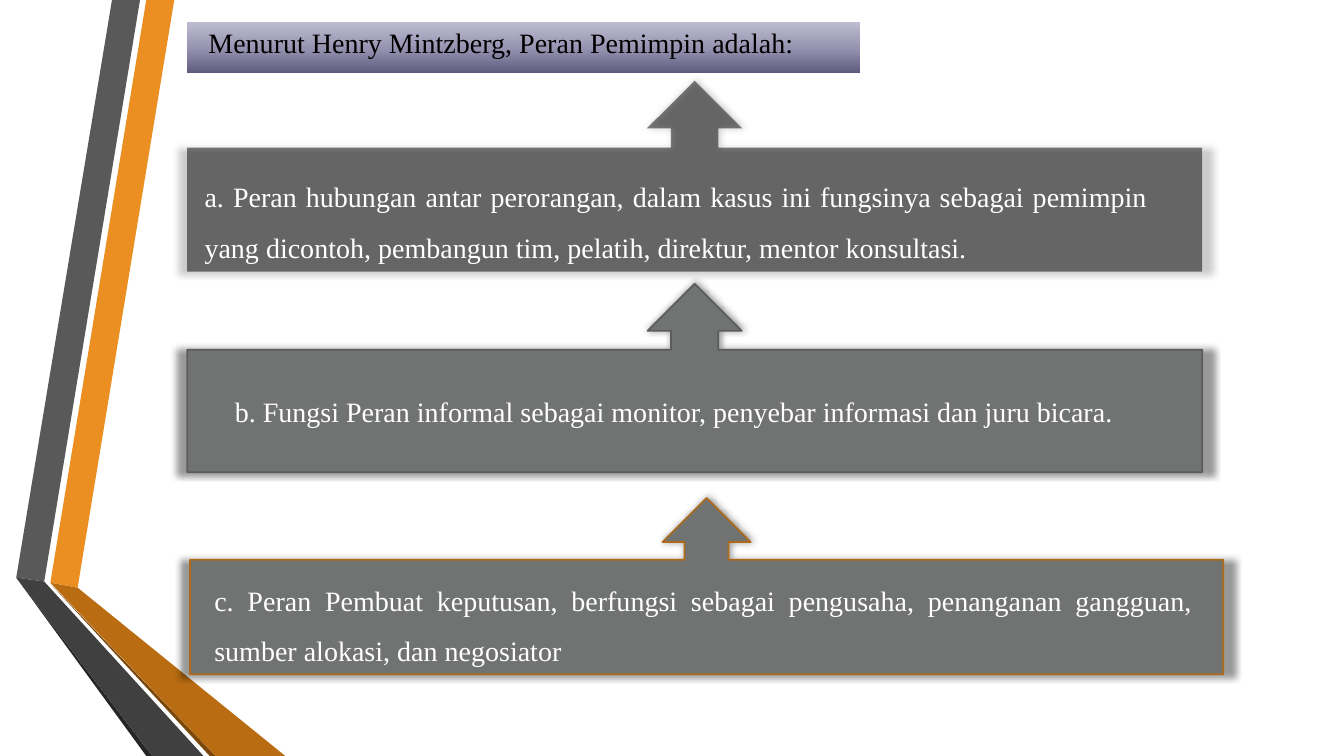
"""Builds a slide with three leadership roles in stacked arrow callouts."""
from dataclasses import dataclass

from lxml import etree
from pptx import Presentation
from pptx.dml.color import RGBColor
from pptx.enum.shapes import MSO_SHAPE
from pptx.enum.text import MSO_AUTO_SIZE, PP_ALIGN
from pptx.oxml.ns import qn
from pptx.util import Pt

RECTANGLE = MSO_SHAPE.RECTANGLE
CALLOUT = MSO_SHAPE.UP_ARROW_CALLOUT
JUSTIFY = PP_ALIGN.JUSTIFY
GROW = MSO_AUTO_SIZE.SHAPE_TO_FIT_TEXT


@dataclass(frozen=True)
class Theme:
    """Colours and type of the slide."""
    font: str = "Times New Roman"
    size: float = 20
    black: str = "000000"
    white: str = "FFFFFF"
    callout: str = "717272"
    grey_edge: str = "5B5C5C"
    orange_edge: str = "AE6A19"
    orange: str = "EB8F22"
    orange_fold: str = "B96C11"
    orange_side: str = "7B480B"
    grey: str = "595959"
    grey_fold: str = "404040"
    grey_side: str = "262626"
    banner: tuple = ((0, "5D5A7C"), (48, "9693B1"), (100, "BEBCCF"))


def add_node(parent, tag, **attributes):
    """Append a drawing element with the given attributes."""
    values = {name: str(value) for name, value in attributes.items()}
    return etree.SubElement(parent, qn(tag), values)


def write_text(frame, text, *, font, size, color, align=None, line_spacing=None, space_after=None):
    """Write one formatted paragraph into a text frame."""
    para = frame.paragraphs[0]
    para.alignment = align
    para.line_spacing = line_spacing
    para.space_after = space_after
    span = para.add_run()
    span.text = text
    span.font.name = font
    span.font.size = Pt(size)
    span.font.color.rgb = RGBColor.from_string(color)


class SlideBuilder:
    """Draws themed elements on one slide."""

    def __init__(self, page, theme):
        """Keep the page and its theme."""
        self.page = page
        self.theme = theme

    def paint(self, shape, fill, edge=None):
        """Set fill and outline and clear the shadow."""
        shape.fill.solid()
        shape.fill.fore_color.rgb = RGBColor.from_string(fill)
        if edge:
            shape.line.color.rgb = RGBColor.from_string(edge)
            shape.line.width = Pt(1.25)
        else:
            shape.line.fill.background()
        shape.shadow.inherit = False

    def ribbon(self, points, color):
        """Draw a closed polygon."""
        start, *others = [(Pt(x), Pt(y)) for x, y in points]
        outline = self.page.shapes.build_freeform(*start)
        outline.add_line_segments(others, close=True)
        self.paint(outline.convert_to_shape(), color)

    def banner(self, *bounds):
        """Draw a rectangle with the theme's upward gradient."""
        box = self.page.shapes.add_shape(RECTANGLE, *map(Pt, bounds))
        self.paint(box, self.theme.white)
        box.fill.gradient()
        box.fill.gradient_angle = 90
        stops = box._element.spPr.find(qn("a:gradFill")).find(qn("a:gsLst"))
        for stop in list(stops):
            stops.remove(stop)
        for position, color in self.theme.banner:
            stop = add_node(stops, "a:gs", pos=position * 1000)
            add_node(stop, "a:srgbClr", val=color)

    def callout(self, bounds, fill, edge=None, opacity=100):
        """Draw an up-arrow callout with a soft, slightly enlarged shadow."""
        box = self.page.shapes.add_shape(CALLOUT, *map(Pt, bounds))
        self.paint(box, fill, edge)
        properties = box._element.spPr
        if opacity < 100:
            color = properties.find(qn("a:solidFill"))[0]
            add_node(color, "a:alpha", val=opacity * 1000)
        shadow = add_node(properties.find(qn("a:effectLst")), "a:outerShdw", blurRad=Pt(5),
                          sx=102000, sy=102000, algn="ctr", rotWithShape=0)
        tint = add_node(shadow, "a:srgbClr", val=self.theme.black)
        add_node(tint, "a:alpha", val=40000)

    def text(self, bounds, words, color, **paragraph_format):
        """Add a wrapping text box."""
        box = self.page.shapes.add_textbox(*map(Pt, bounds))
        box.text_frame.word_wrap = True
        box.text_frame.auto_size = GROW
        write_text(box.text_frame, words, font=self.theme.font, size=self.theme.size,
                   color=color, **paragraph_format)


def main():
    """Build and save the deck."""
    deck = Presentation()
    deck.slide_width, deck.slide_height = Pt(960), Pt(540)
    theme = Theme()
    builder = SlideBuilder(deck.slides.add_slide(deck.slide_layouts[6]), theme)

    ribbons = (
        (((36, 416.2), (55.5, 419.8), (124.5, 0), (104.5, 0)), theme.orange),
        (((100, 0), (80, 0), (11.6, 412.6), (31.6, 415.4)), theme.grey),
        (((11.6, 412.6), (104.5, 540), (108.7, 540)), theme.grey_side),
        (((36, 416.9), (149.8, 540), (154, 540)), theme.orange_side),
        (((36, 416.2), (154, 540), (203.8, 540), (55.5, 419.8)), theme.orange_fold),
        (((11.6, 412.6), (108.7, 540), (145.4, 540), (31.6, 415.4)), theme.grey_fold),
    )
    for points, color in ribbons:
        builder.ribbon(points, color)

    builder.banner(133.7, 15.8, 480.9, 36.5)
    builder.text((141.8, 14.4, 473, 55.4), "Menurut Henry Mintzberg, Peran Pemimpin adalah:",
                 theme.black)

    roles = (
        ((133.7, 57.6, 725, 136.5), (theme.black, None, 50), (139, 113, 687.6, 112.3),
         "a. Peran hubungan antar perorangan, dalam kasus ini fungsinya sebagai pemimpin "
         "yang dicontoh, pembangun tim, pelatih, direktur, mentor konsultasi."),
        ((133.7, 202.7, 725, 134.6), (theme.callout, theme.grey_edge), (160.6, 266.4, 687.6, 75.6),
         "b. Fungsi Peran informal sebagai monitor, penyebar informasi dan juru bicara."),
        ((135.7, 355.7, 738, 126), (theme.callout, theme.orange_edge), (146, 401, 712.8, 112.3),
         "c. Peran Pembuat keputusan, berfungsi sebagai pengusaha, penanganan gangguan, "
         "sumber alokasi, dan negosiator"),
    )
    for callout_bounds, look, text_bounds, words in roles:
        builder.callout(callout_bounds, *look)
        builder.text(text_bounds, words, theme.white, align=JUSTIFY, line_spacing=1.5,
                     space_after=Pt(8))

    deck.save("out.pptx")


if __name__ == "__main__":
    main()
